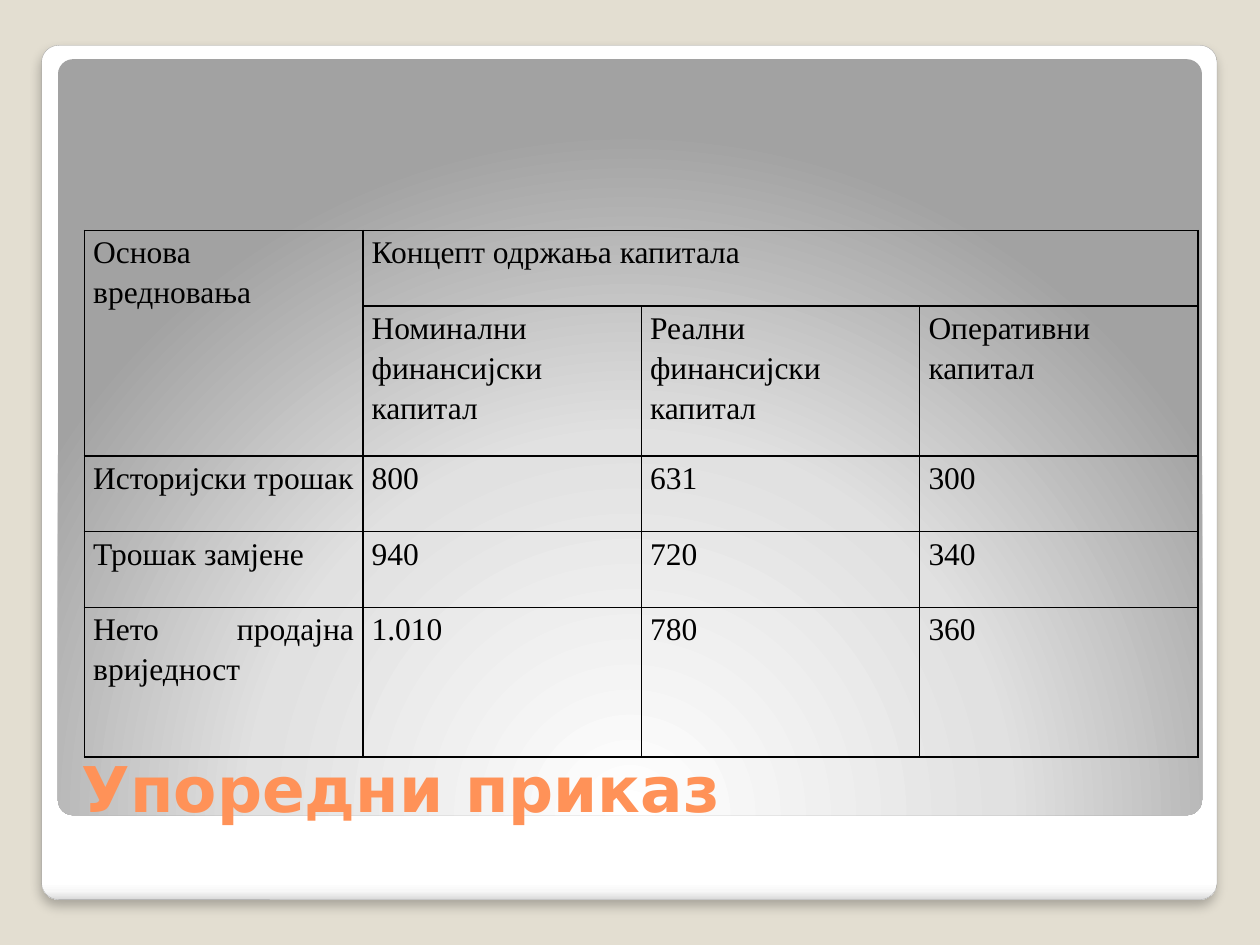
from lxml import etree
from pptx import Presentation
from pptx.dml.color import RGBColor
from pptx.enum.shapes import MSO_SHAPE
from pptx.enum.text import MSO_ANCHOR, PP_ALIGN
from pptx.oxml import parse_xml
from pptx.oxml.ns import nsdecls, qn
from pptx.util import Inches, Pt

ROUNDED = MSO_SHAPE.ROUNDED_RECTANGLE
BOTTOM, TOP = MSO_ANCHOR.BOTTOM, MSO_ANCHOR.TOP
LEFT, JUSTIFY = PP_ALIGN.LEFT, PP_ALIGN.JUSTIFY

TITLE = "Упоредни приказ"
HEADING_ROWS = [
    ["Основа вредновања", "Концепт одржања капитала", None, None],
    [None, "Номинални финансијски капитал", "Реални финансијски капитал", "Оперативни капитал"],
]
VALUE_ROWS = [
    ["Историјски трошак", "800", "631", "300"],
    ["Трошак замјене", "940", "720", "340"],
    ["Нето продајна вриједност", "1.010", "780", "360"],
]
MERGES = [((0, 0), (1, 0)), ((0, 1), (0, 3))]
ROW_HEIGHTS = [0.6, 1.19, 0.6, 0.6, 1.19]
COLUMN_WIDTH = 2.21

THEME = {
    "background": "E3DED1",
    "card": [(0, "FFFFFF"), (98, "FFFFFF"), (99, "F7F7F7"), (100, "DADADA")],
    "panel": [(0, "FFFFFF"), (55, "E1E1E1"), (100, "A2A2A2")],
    "card_line": "A4A4A4",
    "shadow": "000000",
    "border": "000000",
    "title": {"font": "DejaVu Sans", "size": 36, "color": "FF9258", "bold": True},
    "cell": {"font": "Times New Roman", "size": 18, "color": "000000"},
}
DOWNWARD = '<a:lin ang="5400000" scaled="0"/>'
FROM_BELOW = ('<a:path path="circle"><a:fillToRect l="50000" t="175000" '
              'r="50000" b="-75000"/></a:path>')


def write(frame, text, font, size, color, bold=False, align=LEFT, spacing=None, after=0):
    paragraph = frame.paragraphs[0]
    paragraph.alignment = align
    paragraph.line_spacing = spacing
    paragraph.space_before, paragraph.space_after = Pt(0), Pt(after)
    run = paragraph.add_run()
    run.text = text
    run.font.name, run.font.size, run.font.bold = font, Pt(size), bold
    run.font.color.rgb = RGBColor.from_string(color)


def add_rounded(slide, box, stops, direction):
    shape = slide.shapes.add_shape(ROUNDED, *map(Inches, box))
    shape.adjustments[0] = 0.02
    shape.shadow.inherit = False
    shape.line.fill.background()
    shape.fill.gradient()
    stops_xml = "".join(
        f'<a:gs pos="{pos * 1000}"><a:srgbClr val="{color}"/></a:gs>' for pos, color in stops)
    old = shape.element.spPr.find(qn("a:gradFill"))
    old.getparent().replace(old, parse_xml(
        f'<a:gradFill {nsdecls("a")} rotWithShape="1">'
        f'<a:gsLst>{stops_xml}</a:gsLst>{direction}</a:gradFill>'))
    return shape


def add_shadow(shape, color):
    shape.element.spPr.find(qn("a:effectLst")).append(parse_xml(
        f'<a:outerShdw {nsdecls("a")} blurRad="{Pt(6)}" dist="{Pt(4)}" dir="5400000" '
        f'algn="t" rotWithShape="0"><a:srgbClr val="{color}"><a:alpha val="25000"/>'
        '</a:srgbClr></a:outerShdw>'))


def set_borders(cell, color):
    properties = cell._tc.get_or_add_tcPr()
    for position, side in enumerate(("lnL", "lnR", "lnT", "lnB")):
        line = etree.Element(qn(f"a:{side}"), w=str(Pt(1)))
        fill = etree.SubElement(line, qn("a:solidFill"))
        etree.SubElement(fill, qn("a:srgbClr"), val=color)
        properties.insert(position, line)


def add_comparison(slide, rows):
    columns = len(rows[0])
    table = slide.shapes.add_table(
        len(rows), columns, Inches(0.67), Inches(1.83),
        Inches(COLUMN_WIDTH * columns), Inches(sum(ROW_HEIGHTS))).table
    table.first_row = table.horz_banding = False
    for column in table.columns:
        column.width = Inches(COLUMN_WIDTH)
    for row, height in zip(table.rows, ROW_HEIGHTS):
        row.height = Inches(height)
    for start, end in MERGES:
        table.cell(*start).merge(table.cell(*end))
    for r, row in enumerate(rows):
        for c, text in enumerate(row):
            cell = table.cell(r, c)
            cell.fill.background()
            set_borders(cell, THEME["border"])
            cell.margin_left = cell.margin_right = Inches(0.07)
            cell.margin_top = cell.margin_bottom = 0
            cell.vertical_anchor = TOP
            if text:
                write(cell.text_frame, text, align=JUSTIFY, spacing=1.15, after=6,
                      **THEME["cell"])


def main():
    deck = Presentation()
    deck.slide_width, deck.slide_height = Inches(10), Inches(7.5)
    slide = deck.slides.add_slide(deck.slide_layouts[5])
    slide.background.fill.solid()
    slide.background.fill.fore_color.rgb = RGBColor.from_string(THEME["background"])

    card = add_rounded(slide, (0.33, 0.36, 9.33, 6.78), THEME["card"], DOWNWARD)
    card.line.color.rgb = RGBColor.from_string(THEME["card_line"])
    card.line.width = Pt(0.16)
    add_shadow(card, THEME["shadow"])
    panel = add_rounded(slide, (0.46, 0.47, 9.08, 6), THEME["panel"], FROM_BELOW)

    title = slide.shapes.title
    for backdrop in (card, panel):
        title.element.addprevious(backdrop.element)
    title.left, title.top, title.width, title.height = map(Inches, (0.55, 5.45, 8.95, 1.15))
    title.text_frame.vertical_anchor = BOTTOM
    write(title.text_frame, TITLE, **THEME["title"])

    add_comparison(slide, HEADING_ROWS + VALUE_ROWS)
    deck.save("out.pptx")


if __name__ == "__main__":
    main()
